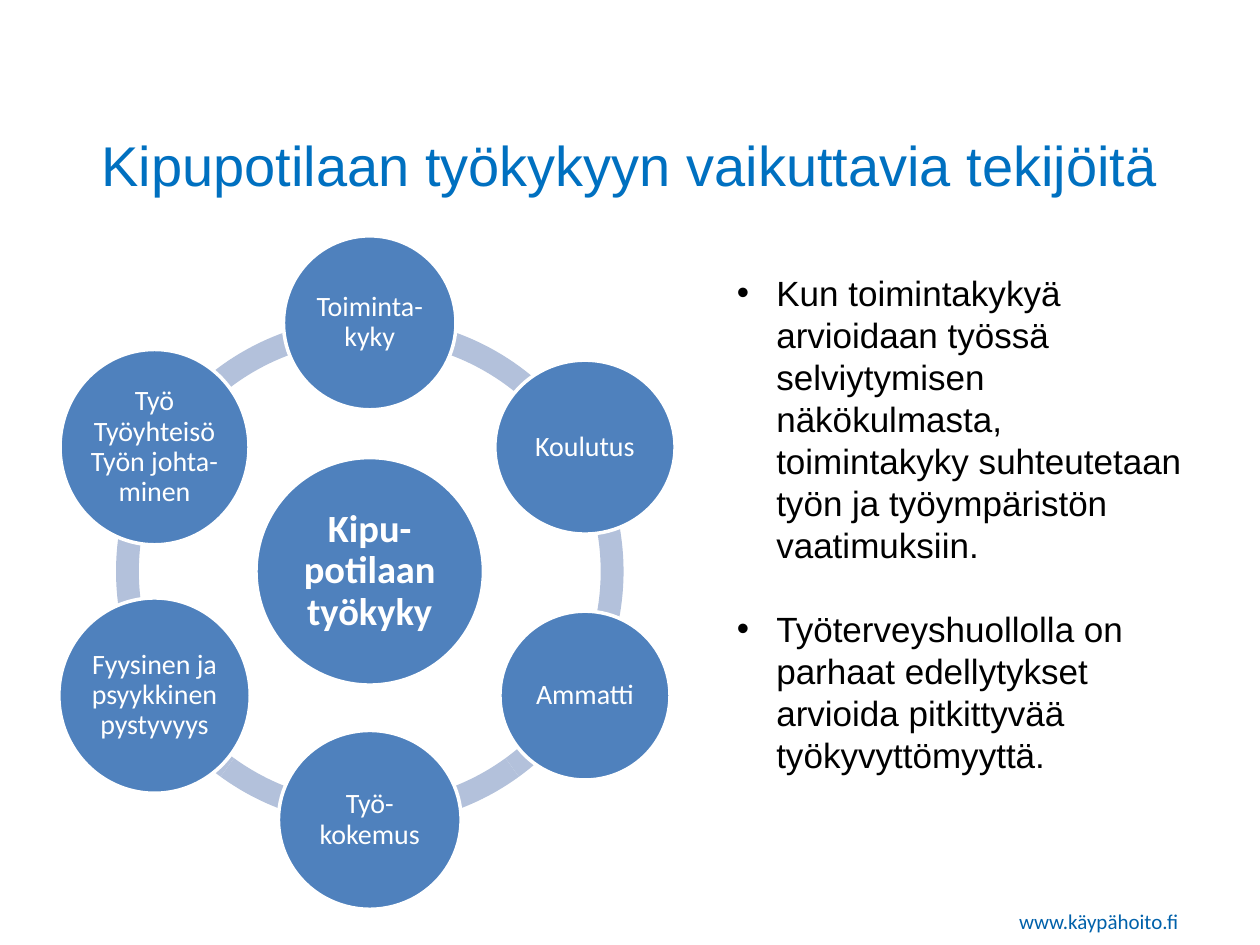
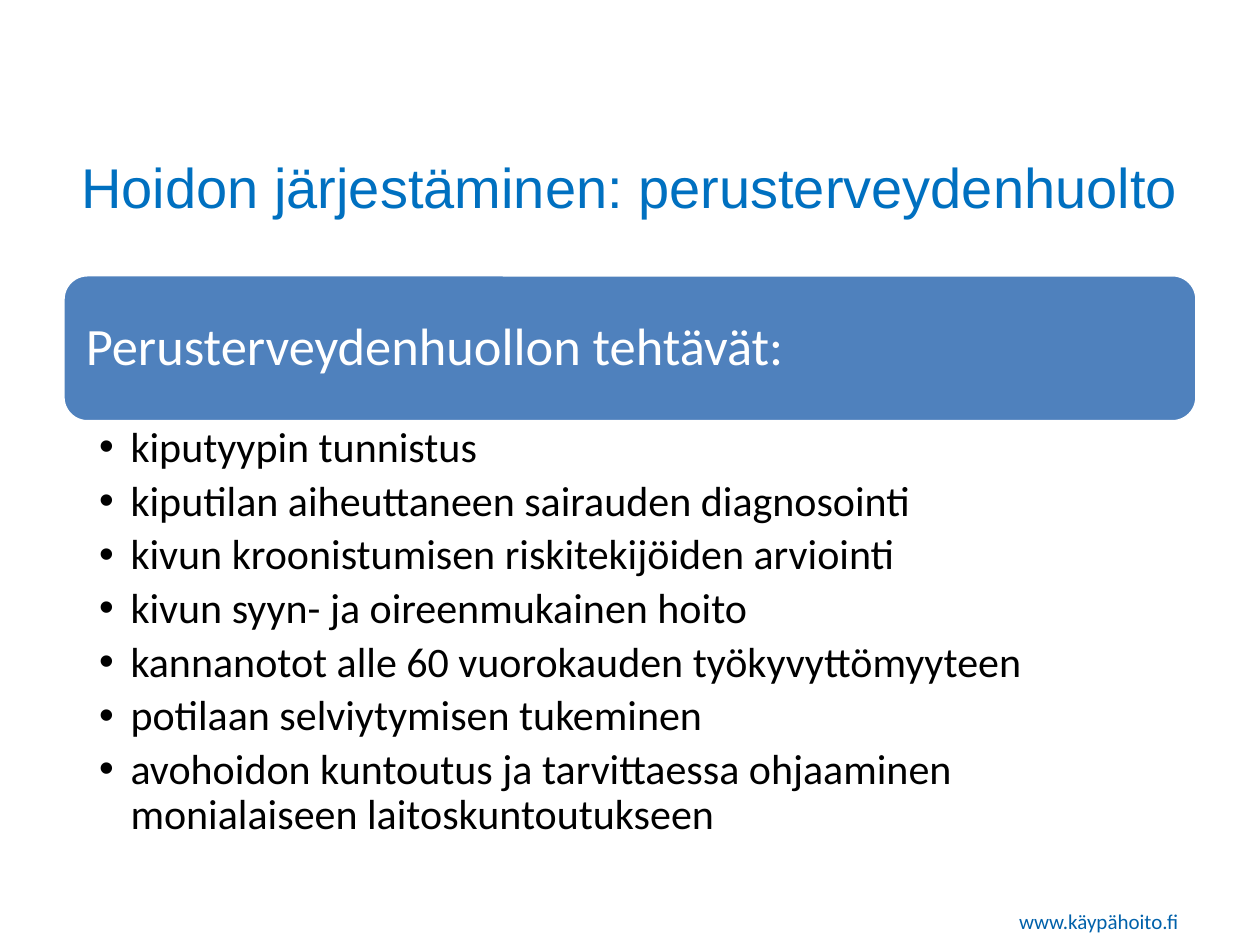
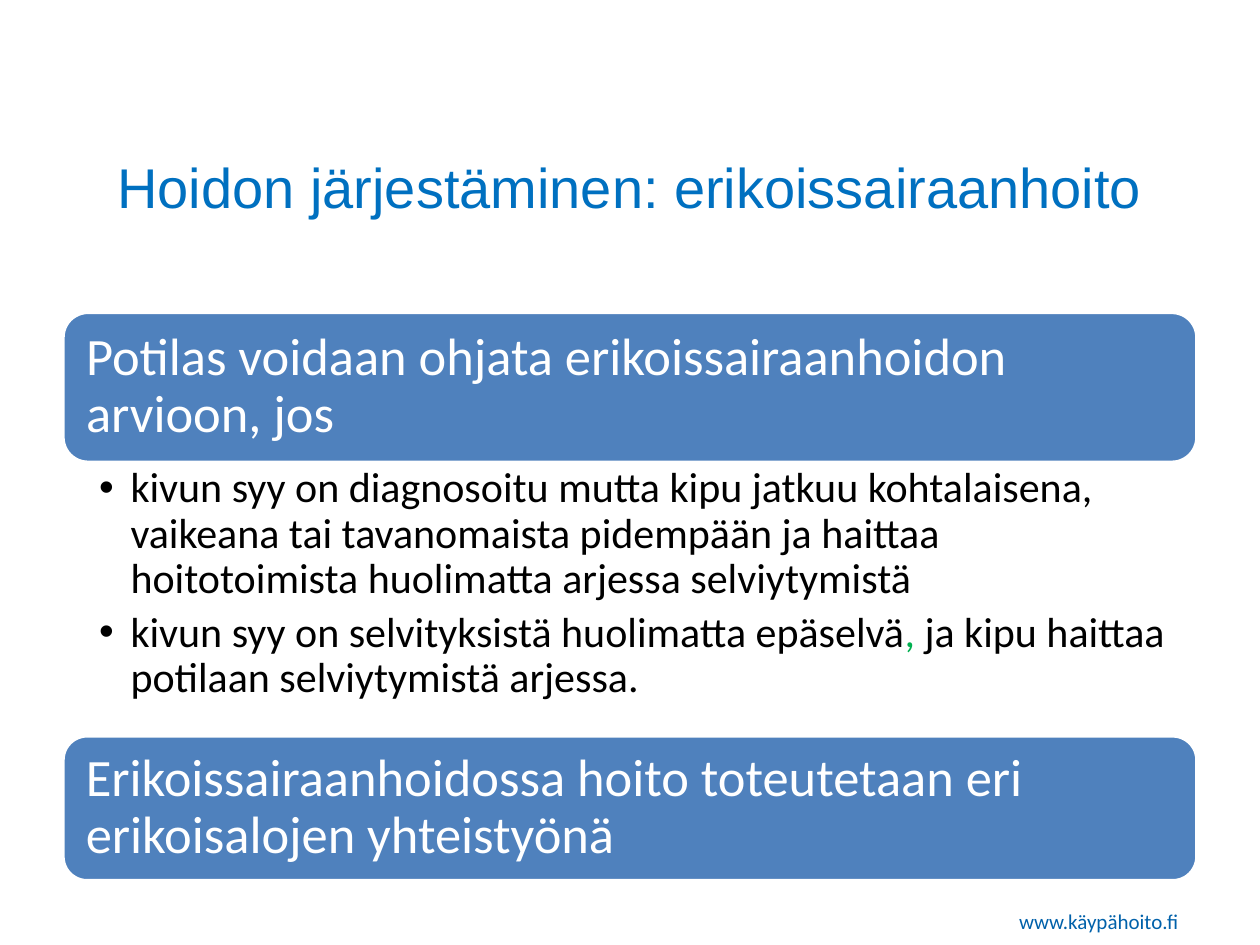
"""Build three slides on the work ability and care of pain patients."""
import itertools
import math

import lxml.etree
import pptx
import pptx.dml.color
import pptx.enum.shapes
import pptx.enum.text
import pptx.oxml.ns
import pptx.util

Pt = pptx.util.Pt
RGBColor = pptx.dml.color.RGBColor
Shape = pptx.enum.shapes.MSO_SHAPE
Align = pptx.enum.text.PP_ALIGN
Anchor = pptx.enum.text.MSO_ANCHOR

TITLE_BLUE = RGBColor(0x00, 0x70, 0xC0)
FOOTER_BLUE = RGBColor(0x00, 0x61, 0xAA)
NODE_BLUE = RGBColor(0x4F, 0x81, 0xBD)
RING_BLUE = RGBColor(0xB3, 0xC1, 0xDB)
GREEN = RGBColor(0x00, 0xB0, 0x50)
WHITE = RGBColor(0xFF, 0xFF, 0xFF)
BLACK = RGBColor(0x00, 0x00, 0x00)

MARGIN, CONTENT_WIDTH = 36, 648
FOOTER = "www.käypähoito.fi"

WHEEL_TITLE = "Kipupotilaan työkykyyn vaikuttavia tekijöitä"
WHEEL_CENTRE = (211.3, 326.5)
NODE_DISTANCE = 142
RING_SIZE = 290
RING_ANGLES = [18, 54, 90, 126, 162, 198, 18]
HUB = ("Kipu-potilaan työkyky", 130, 130)
FACTORS = [
    ("Toiminta-kyky", 98.6, 99.4),
    ("Koulutus", 103, 99.4),
    ("Ammatti", 97.2, 96.5),
    ("Työ-kokemus", 104.4, 102.2),
    ("Fyysinen ja psyykkinen pystyvyys", 109.4, 111.6),
    ("Työ Työyhteisö Työn johta-minen", 108, 111.6),
]
WORK_POINTS = [
    "Kun toimintakykyä arvioidaan työssä selviytymisen näkökulmasta, toimintakyky "
    "suhteutetaan työn ja työympäristön vaatimuksiin.",
    "Työterveyshuollolla on parhaat edellytykset arvioida pitkittyvää työkyvyttömyyttä.",
]

CARE_SLIDES = [
    {
        "title": "Hoidon järjestäminen: perusterveydenhuolto",
        "headings": [("Perusterveydenhuollon tehtävät:", 157, 84)],
        "list_box": (241, 256),
        "points": [
            "kiputyypin tunnistus",
            "kiputilan aiheuttaneen sairauden diagnosointi",
            "kivun kroonistumisen riskitekijöiden arviointi",
            "kivun syyn- ja oireenmukainen hoito",
            "kannanotot alle 60 vuorokauden työkyvyttömyyteen",
            "potilaan selviytymisen tukeminen",
            "avohoidon kuntoutus ja tarvittaessa ohjaaminen monialaiseen laitoskuntoutukseen",
        ],
    },
    {
        "title": "Hoidon järjestäminen: erikoissairaanhoito",
        "headings": [
            ("Potilas voidaan ohjata erikoissairaanhoidon arvioon, jos", 178.5, 85.7),
            ("Erikoissairaanhoidossa hoito toteutetaan eri erikoisalojen yhteistyönä", 420.5, 82.8),
        ],
        "list_box": (264.2, 156.3),
        "points": [
            "kivun syy on diagnosoitu mutta kipu jatkuu kohtalaisena, vaikeana tai tavanomaista "
            "pidempään ja haittaa hoitotoimista huolimatta arjessa selviytymistä",
            [
                ("kivun syy on selvityksistä huolimatta epäselvä", BLACK),
                (",", GREEN),
                (" ja kipu haittaa potilaan selviytymistä arjessa.", BLACK),
            ],
        ],
    },
]


def format_run(run, font_name, size, color, bold=False):
    run.font.name = font_name
    run.font.size = Pt(size)
    run.font.color.rgb = color
    run.font.bold = bold


def set_insets(frame, left, top, right, bottom):
    frame.margin_left, frame.margin_top = Pt(left), Pt(top)
    frame.margin_right, frame.margin_bottom = Pt(right), Pt(bottom)


def write_text(shape, text, font_name, size, color, align=Align.LEFT, bold=False, spacing=None):
    frame = shape.text_frame
    frame.word_wrap = True
    frame.text = text
    paragraph = frame.paragraphs[0]
    paragraph.alignment = align
    paragraph.line_spacing = spacing
    format_run(paragraph.runs[0], font_name, size, color, bold)


def add_text_box(slide, left, top, width, height):
    return slide.shapes.add_textbox(Pt(left), Pt(top), Pt(width), Pt(height))


def add_filled_shape(slide, kind, left, top, width, height, fill, outlined=True):
    shape = slide.shapes.add_shape(kind, Pt(left), Pt(top), Pt(width), Pt(height))
    shape.shadow.inherit = False
    shape.fill.solid()
    shape.fill.fore_color.rgb = fill
    if outlined:
        shape.line.color.rgb = WHITE
        shape.line.width = Pt(2)
    else:
        shape.line.fill.background()
    return shape


def add_bullets(box, points, font_name, size, hang, spacing, gap):
    frame = box.text_frame
    frame.word_wrap = True
    for index, point in enumerate(points):
        paragraph = frame.add_paragraph() if index else frame.paragraphs[0]
        properties = paragraph._p.get_or_add_pPr()
        properties.set("marL", str(int(Pt(hang))))
        properties.set("indent", str(-int(Pt(hang))))
        qualified = pptx.oxml.ns.qn
        lxml.etree.SubElement(properties, qualified("a:buFont"), typeface="Arial")
        lxml.etree.SubElement(properties, qualified("a:buChar"), char="•")
        paragraph.line_spacing = spacing
        paragraph.space_after = Pt(gap)
        parts = [(point, BLACK)] if isinstance(point, str) else point
        for text, color in parts:
            run = paragraph.add_run()
            run.text = text
            format_run(run, font_name, size, color)


def add_base_slide(presentation, title, title_top):
    slide = presentation.slides.add_slide(presentation.slide_layouts[6])
    footer_box = add_text_box(slide, 575.3, 515.5, 136, 21.8)
    write_text(footer_box, FOOTER, "Calibri", 12, FOOTER_BLUE)
    title_box = add_text_box(slide, MARGIN, title_top, CONTENT_WIDTH, 90)
    title_box.text_frame.vertical_anchor = Anchor.MIDDLE
    write_text(title_box, title, "Arial", 32, TITLE_BLUE, Align.CENTER)
    return slide


def add_node(slide, node, centre_x, centre_y, size, inset, bold=False):
    text, width, height = node
    circle = add_filled_shape(slide, Shape.OVAL, centre_x - width / 2, centre_y - height / 2,
                              width, height, NODE_BLUE)
    circle.text_frame.vertical_anchor = Anchor.MIDDLE
    set_insets(circle.text_frame, inset, inset, inset, inset)
    write_text(circle, text, "Calibri", size, WHITE, Align.CENTER, bold, 0.9)


def add_wheel(slide):
    centre_x, centre_y = WHEEL_CENTRE
    for start, end in itertools.pairwise(RING_ANGLES):
        arc = add_filled_shape(slide, Shape.BLOCK_ARC, centre_x - RING_SIZE / 2,
                               centre_y - RING_SIZE / 2, RING_SIZE, RING_SIZE, RING_BLUE, False)
        arc.adjustments[0] = start * 0.6
        arc.adjustments[1] = end * 0.6
        arc.adjustments[2] = 0.045
    add_node(slide, HUB, centre_x, centre_y, 22, 2.2, True)
    for index, factor in enumerate(FACTORS):
        angle = math.radians(index * 360 / len(FACTORS) - 90)
        add_node(slide, factor, centre_x + NODE_DISTANCE * math.cos(angle),
                 centre_y + NODE_DISTANCE * math.sin(angle), 16, 1.5)


def add_care_slide(presentation, content):
    slide = add_base_slide(presentation, content["title"], 61.5)
    for text, top, height in content["headings"]:
        band = add_filled_shape(slide, Shape.ROUNDED_RECTANGLE, MARGIN, top,
                                CONTENT_WIDTH, height, NODE_BLUE)
        band.text_frame.vertical_anchor = Anchor.MIDDLE
        set_insets(band.text_frame, 9, 9, 9, 9)
        write_text(band, text, "Calibri", 30, WHITE, spacing=0.9)
    top, height = content["list_box"]
    list_box = add_text_box(slide, MARGIN, top, CONTENT_WIDTH, height)
    set_insets(list_box.text_frame, 20.6, 2.4, 13.5, 2.4)
    add_bullets(list_box, content["points"], "Calibri", 24, 18, 0.9, 4.8)


def main():
    presentation = pptx.Presentation()
    presentation.slide_width, presentation.slide_height = Pt(720), Pt(540)
    slide = add_base_slide(presentation, WHEEL_TITLE, 49)
    add_wheel(slide)
    points_box = add_text_box(slide, 414, 151.5, 270, 320)
    add_bullets(points_box, WORK_POINTS, "Arial", 20, 22.5, Pt(24), 24)
    for content in CARE_SLIDES:
        add_care_slide(presentation, content)
    presentation.save("out.pptx")


if __name__ == "__main__":
    main()
